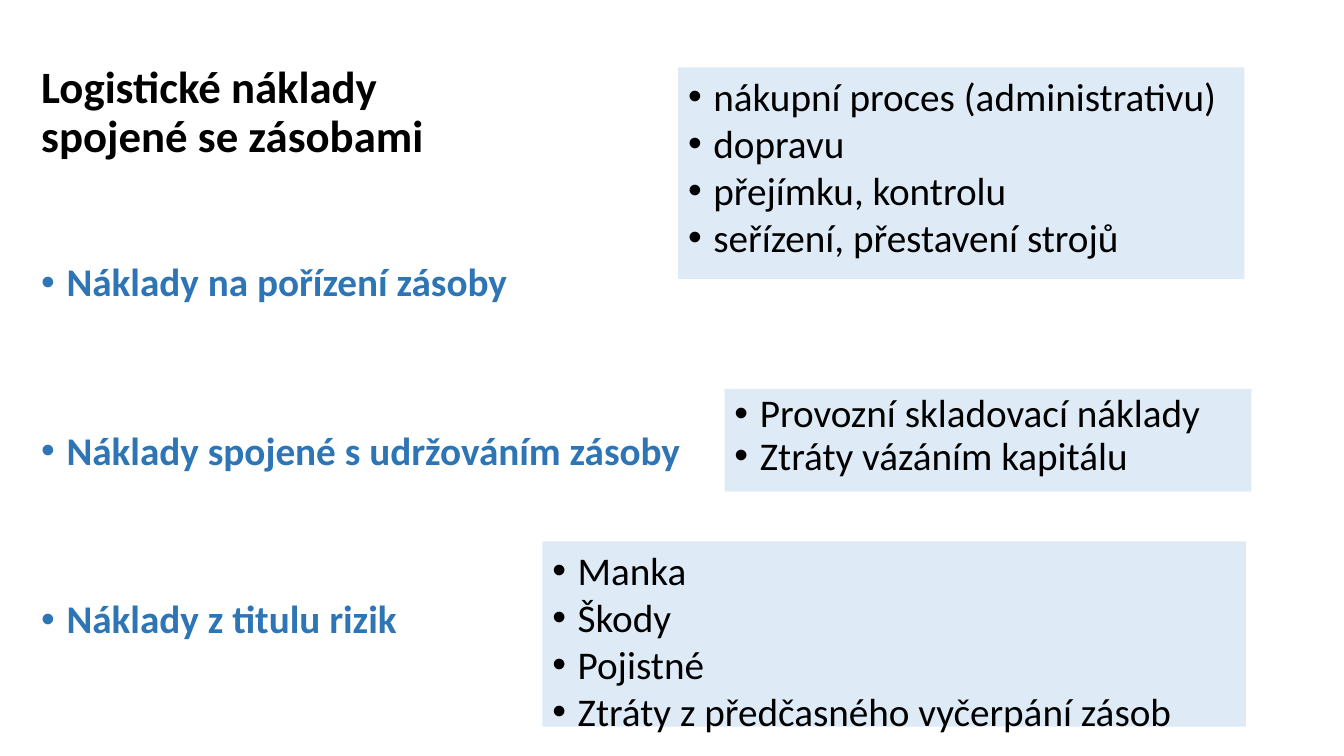
from pptx import Presentation
from pptx.dml.color import RGBColor
from pptx.enum.shapes import MSO_SHAPE
from pptx.enum.text import MSO_ANCHOR, PP_ALIGN
from pptx.oxml.ns import qn
from pptx.util import Cm, Pt
from lxml import etree

COLORS = {"text": "000000", "category": "2E75B6", "panel": "DEEBF7"}
INDENT = Cm(0.64)


def add_span(para, text, size, color, bold=False):
    span = para.add_run()
    span.text = text
    span.font.name = "Calibri"
    span.font.size = Pt(size)
    span.font.bold = bold
    span.font.color.rgb = RGBColor.from_string(COLORS[color])


def add_bullets(frame, items, color, bold=False, line_spacing=1.0, gap=0):
    frame.word_wrap = True
    frame.vertical_anchor = MSO_ANCHOR.TOP
    for index, item in enumerate(items):
        para = frame.add_paragraph() if index else frame.paragraphs[0]
        para.alignment = PP_ALIGN.LEFT
        para.line_spacing = line_spacing
        para.space_before = Pt(gap if index else 0)
        properties = para._p.get_or_add_pPr()
        properties.set("marL", str(INDENT))
        properties.set("indent", str(-INDENT))
        etree.SubElement(properties, qn("a:buFont")).set("typeface", "Arial")
        etree.SubElement(properties, qn("a:buChar")).set("char", "•")
        add_span(para, item, 28, color, bold)


deck = Presentation()
deck.slide_width, deck.slide_height = Cm(33.87), Cm(19.05)
page = deck.slides.add_slide(deck.slide_layouts[6])

# Title
title = page.shapes.add_textbox(Cm(0.79), Cm(1.02), Cm(15.24), Cm(3.68)).text_frame
title.word_wrap = True
title.vertical_anchor = MSO_ANCHOR.MIDDLE
para = title.paragraphs[0]
para.line_spacing = 0.9
add_span(para, "Logistické náklady ", 32, "text", bold=True)
para.add_line_break()
add_span(para, "spojené se zásobami", 32, "text", bold=True)

# Cost categories, spread down the left side
categories = page.shapes.add_textbox(Cm(0.79), Cm(5.08), Cm(16.66), Cm(12.07)).text_frame
categories.margin_top = Cm(1.55)
add_bullets(
    categories,
    ["Náklady na pořízení zásoby", "Náklady spojené s udržováním zásoby", "Náklady z titulu rizik"],
    "category", bold=True, line_spacing=0.9, gap=90,
)

# Panels with the items of each category: left, top, width, height, line spacing, items
panels = [
    (17.09, 1.7, 14.27, 5.33, 1.0,
     ["nákupní proces (administrativu)", "dopravu", "přejímku, kontrolu", "seřízení, přestavení strojů"]),
    (18.26, 9.8, 13.28, 2.59, 0.9,
     ["Provozní skladovací náklady", "Ztráty vázáním kapitálu"]),
    (13.67, 13.64, 17.73, 4.67, 1.0,
     ["Manka", "Škody", "Pojistné", "Ztráty z předčasného vyčerpání zásob"]),
]
for left, top, width, height, line_spacing, items in panels:
    box = page.shapes.add_shape(MSO_SHAPE.RECTANGLE, Cm(left), Cm(top), Cm(width), Cm(height))
    box.shadow.inherit = False
    box.fill.solid()
    box.fill.fore_color.rgb = RGBColor.from_string(COLORS["panel"])
    box.line.fill.background()
    add_bullets(box.text_frame, items, "text", line_spacing=line_spacing)

deck.save("out.pptx")
